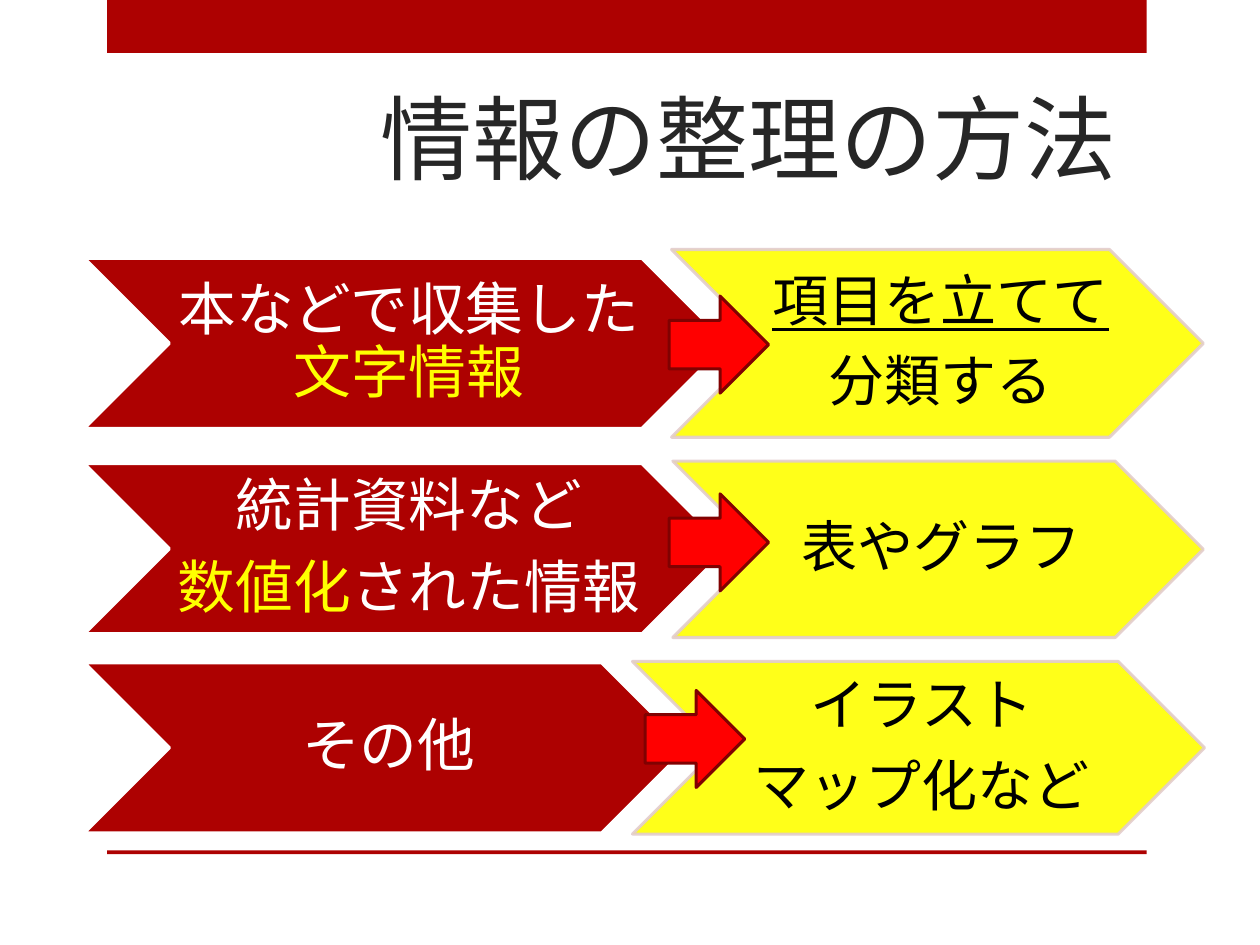
from pptx import Presentation
from pptx.dml.color import RGBColor
from pptx.enum.shapes import MSO_SHAPE
from pptx.enum.text import MSO_ANCHOR, PP_ALIGN
from pptx.oxml.ns import qn
from pptx.util import Inches, Pt
from lxml.etree import SubElement

HUES = {
    "dark": "AD0101", "edge": "800101", "red": "FF0000", "yellow": "FFFF00",
    "pale": "E3CCCC", "white": "FFFFFF", "black": "000000", "title": "262626",
}

ROWS = [
    ((0.67, 2.05, 5.1, 1.35), [[("本などで収集した", "white"), ("文字情報", "yellow")]],
     (5.33, 1.98, 4.22, 1.49), [[("項目を立てて", "black")], [("分類する", "black")]],
     (5.31, 2.35)),
    ((0.67, 3.68, 5.1, 1.35),
     [[("統計資料など", "white")], [("数値化", "yellow"), ("された情報", "white")]],
     (5.34, 3.66, 4.21, 1.4), [[("表やグラフ", "black")]],
     (5.31, 3.92)),
    ((0.67, 5.26, 4.78, 1.35), [[("その他", "white")]],
     (5.02, 5.25, 4.54, 1.37), [[("イラスト", "black")], [("マップ化など", "black")]],
     (5.12, 5.48)),
]


def tint(name):
    return RGBColor.from_string(HUES[name])


def fade(fill):
    for hue in fill._xPr.iter(qn("a:srgbClr")):
        SubElement(hue, qn("a:alpha"), val="90000")


def add_form(slide, kind, box, fill, line=None):
    form = slide.shapes.add_shape(kind, *map(Inches, box))
    form.shadow.inherit = False
    form.fill.solid()
    form.fill.fore_color.rgb = tint(fill)
    if line:
        form.line.color.rgb = tint(line)
        form.line.width = Pt(1.75)
    else:
        form.line.fill.background()
    return form


def add_title(slide, text):
    box = slide.shapes.add_textbox(Inches(0), Inches(0.6), Inches(10.24), Inches(1.75))
    frame = box.text_frame
    frame.word_wrap = True
    frame.margin_left = Inches(3.02)
    para = frame.paragraphs[0]
    para.text = text
    para.font.name = "Roboto Condensed"
    para.font.size = Pt(52.6)
    para.font.color.rgb = tint("title")


def add_chevron(slide, box, paras, fill, line, size):
    form = add_form(slide, MSO_SHAPE.CHEVRON, box, fill, line)
    frame = form.text_frame
    frame.word_wrap = True
    frame.vertical_anchor = MSO_ANCHOR.MIDDLE
    frame.margin_left = Inches(0.05)
    frame.margin_right = 0
    frame.margin_top = frame.margin_bottom = Inches(0.02)
    for index, runs in enumerate(paras):
        para = frame.add_paragraph() if index else frame.paragraphs[0]
        para.alignment = PP_ALIGN.CENTER
        para.line_spacing = 0.9
        para.space_after = Pt(size * 0.35)
        para.font.name = "Arial"
        para.font.size = Pt(size)
        for text, hue in runs:
            run = para.add_run()
            run.text = text
            run.font.color.rgb = tint(hue)
    return form


def main():
    deck = Presentation()
    deck.slide_width, deck.slide_height = Inches(10), Inches(7.5)
    slide = deck.slides.add_slide(deck.slide_layouts[6])
    for top, height in ((0, 0.42), (6.75, 0.03)):
        add_form(slide, MSO_SHAPE.RECTANGLE, (0.85, top, 8.25, height), "dark")
    add_title(slide, "情報の整理の方法")
    goals = []
    for left, source, right, method, _ in ROWS:
        add_chevron(slide, left, source, "dark", "white", 33)
        goal = add_chevron(slide, right, method, "yellow", "pale", 32)
        fade(goal.fill)
        fade(goal.line.fill)
        goals.append(goal)
    goals[0].text_frame.paragraphs[0].font.underline = True
    for *_, spot in ROWS:
        add_form(slide, MSO_SHAPE.RIGHT_ARROW, (*spot, 0.79, 0.77), "red", "edge")
    deck.save("out.pptx")


if __name__ == "__main__":
    main()
